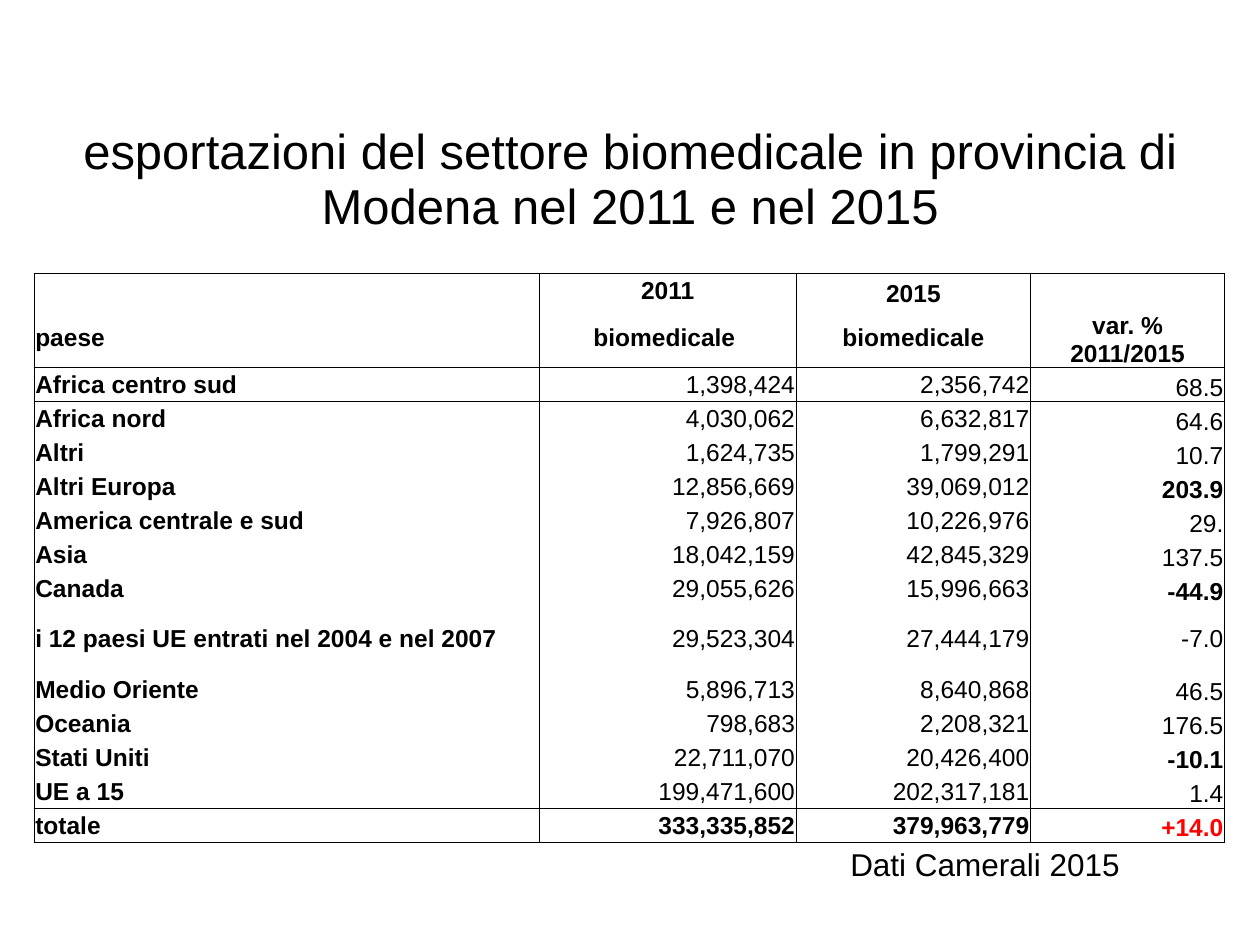
from lxml.etree import SubElement
from pptx import Presentation
from pptx.dml.color import RGBColor
from pptx.enum.text import MSO_ANCHOR, PP_ALIGN
from pptx.oxml.ns import qn
from pptx.util import Inches, Pt

BLACK = RGBColor(0, 0, 0)
WHITE = RGBColor(255, 255, 255)
RED = RGBColor(255, 0, 0)
PLAIN_TABLE_STYLE = "{2D5ABB26-0587-4C30-8999-92F81FD0307C}"

TITLE = "esportazioni del settore biomedicale in provincia di Modena nel 2011 e nel 2015"
HEADER = [
    ("", "2011", "2015", "var. % 2011/2015"),
    ("paese", "biomedicale ", "biomedicale", ""),
]
COUNTRIES = [
    ("Africa centro sud", "1,398,424", "2,356,742", "68.5"),
    ("Africa nord", "4,030,062", "6,632,817", "64.6"),
    ("Altri", "1,624,735", "1,799,291", "10.7"),
    ("Altri Europa", "12,856,669", "39,069,012", "203.9"),
    ("America centrale e sud", "7,926,807", "10,226,976", "29."),
    ("Asia", "18,042,159", "42,845,329", "137.5"),
    ("Canada", "29,055,626", "15,996,663", "-44.9"),
    ("i 12 paesi UE entrati nel 2004 e nel 2007", "29,523,304", "27,444,179", "-7.0"),
    ("Medio Oriente", "5,896,713", "8,640,868", "46.5"),
    ("Oceania", "798,683", "2,208,321", "176.5"),
    ("Stati Uniti", "22,711,070", "20,426,400", "-10.1"),
    ("UE a 15", "199,471,600", "202,317,181", "1.4"),
]
TOTAL = ("totale", "333,335,852", "379,963,779", "+14.0")
ROWS = HEADER + COUNTRIES + [TOTAL]
BOLD_CHANGES = {"203.9", "-44.9", "-10.1"}
TALL_ROW = 9
TOTAL_ROW = len(ROWS) - 1
COLUMN_WIDTHS = [4.01, 2.04, 1.86, 1.54]
COLUMN_SIDES = ["LR", "L", "R", "LR"]
ROW_SIDES = {0: "T", 1: "B", 2: "T", TOTAL_ROW - 1: "B", TOTAL_ROW: "TB"}


def style_paragraph(paragraph, size, color=BLACK, bold=False, alignment=PP_ALIGN.LEFT):
    paragraph.alignment = alignment
    font = paragraph.font
    font.name = "Arial"
    font.size = Pt(size)
    font.bold = bold
    font.color.rgb = color


def add_plain_table(slide, left, top, widths, heights):
    frame = slide.shapes.add_table(
        len(heights), len(widths), Inches(left), Inches(top),
        Inches(sum(widths)), Inches(sum(heights)))
    table = frame.table
    table.first_row = False
    table.horz_banding = False
    table._tbl.tblPr.find(qn("a:tableStyleId")).text = PLAIN_TABLE_STYLE
    for column, width in zip(table.columns, widths):
        column.width = Inches(width)
    for row, height in zip(table.rows, heights):
        row.height = Inches(height)
    return table


def fill_cell(cell, text, anchor, size, **style):
    cell.text = text
    cell.vertical_anchor = anchor
    cell.margin_left = cell.margin_right = cell.margin_top = Inches(0.01)
    cell.margin_bottom = 0
    style_paragraph(cell.text_frame.paragraphs[0], size, **style)


def draw_borders(cell, sides):
    properties = cell._tc.get_or_add_tcPr()
    for side in "LRTB":
        if side in sides:
            line = SubElement(properties, qn(f"a:ln{side}"), w=str(Pt(0.5)))
            fill = SubElement(line, qn("a:solidFill"))
            SubElement(fill, qn("a:srgbClr"), val=str(BLACK))


def add_title(slide):
    table = add_plain_table(slide, 0.59, 0.91, [8.82], [0.95])
    fill_cell(table.cell(0, 0), TITLE, MSO_ANCHOR.BOTTOM, 28, alignment=PP_ALIGN.CENTER)


def cell_alignment(row, column):
    if column == 0:
        return PP_ALIGN.LEFT
    return PP_ALIGN.CENTER if row < len(HEADER) else PP_ALIGN.RIGHT


def cell_anchor(row, column):
    at_bottom = (row, column) == (0, 2) or (column == 3 and row != TALL_ROW)
    return MSO_ANCHOR.BOTTOM if at_bottom else MSO_ANCHOR.MIDDLE


def add_exports_table(slide):
    heights = [0.53 if row == TALL_ROW else 0.27 for row in range(len(ROWS))]
    table = add_plain_table(slide, 0.27, 2.17, COLUMN_WIDTHS, heights)
    change_header = table.cell(0, 3)
    change_header.merge(table.cell(1, 3))
    for row, texts in enumerate(ROWS):
        for column, text in enumerate(texts):
            cell = table.cell(row, column)
            is_total_change = (row, column) == (TOTAL_ROW, 3)
            bold = (column == 0 or row < len(HEADER) or row == TOTAL_ROW
                    or text in BOLD_CHANGES)
            fill_cell(cell, text, cell_anchor(row, column), 14, bold=bold,
                      color=RED if is_total_change else BLACK,
                      alignment=cell_alignment(row, column))
            sides = COLUMN_SIDES[column] + ROW_SIDES.get(row, "")
            draw_borders(cell, sides + "B" if cell.is_merge_origin else sides)
            if is_total_change or cell.is_merge_origin:
                cell.fill.background()
            else:
                cell.fill.solid()
                cell.fill.fore_color.rgb = WHITE


def add_source_note(slide):
    box = slide.shapes.add_textbox(Inches(6.65), Inches(6.66), Inches(2.36), Inches(0.4))
    box.text_frame.word_wrap = False
    paragraph = box.text_frame.paragraphs[0]
    paragraph.text = "Dati Camerali 2015"
    style_paragraph(paragraph, 18)


def main():
    presentation = Presentation()
    presentation.slide_width = Inches(10)
    presentation.slide_height = Inches(7.5)
    slide = presentation.slides.add_slide(presentation.slide_layouts[6])
    add_source_note(slide)
    add_title(slide)
    add_exports_table(slide)
    presentation.save("out.pptx")


if __name__ == "__main__":
    main()
